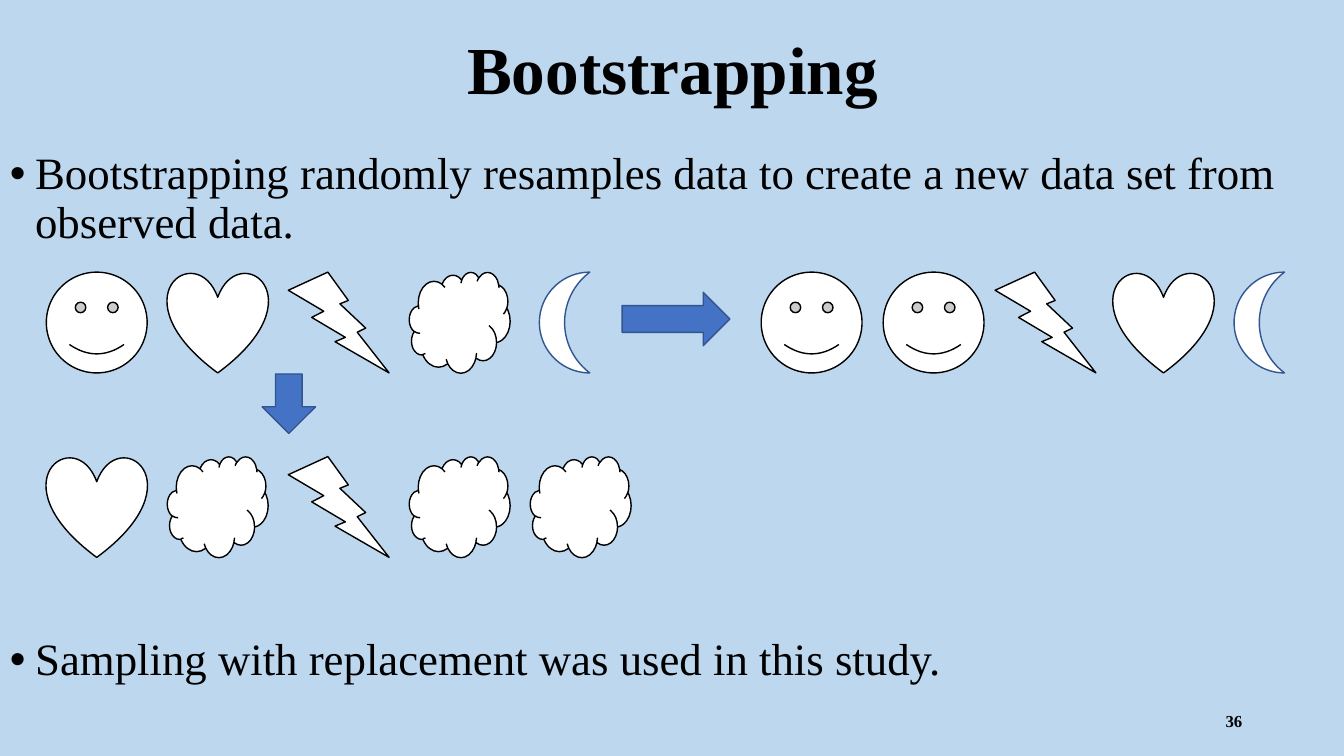
from lxml import etree
from pptx import Presentation
from pptx.dml.color import RGBColor
from pptx.enum.shapes import MSO_SHAPE
from pptx.enum.text import MSO_ANCHOR, PP_ALIGN
from pptx.oxml.ns import qn
from pptx.util import Inches, Pt

SKY = RGBColor(0xBD, 0xD7, 0xEE)
WHITE = RGBColor(0xFF, 0xFF, 0xFF)
BLACK = RGBColor(0, 0, 0)
BLUE = RGBColor(0x44, 0x72, 0xC4)
DARK_BLUE = RGBColor(0x32, 0x54, 0x91)
FONT = "Times New Roman"

SMILEY = MSO_SHAPE.SMILEY_FACE
HEART = MSO_SHAPE.HEART
BOLT = MSO_SHAPE.LIGHTNING_BOLT
CLOUD = MSO_SHAPE.CLOUD
MOON = MSO_SHAPE.MOON
RIGHT_ARROW = MSO_SHAPE.RIGHT_ARROW
DOWN_ARROW = MSO_SHAPE.DOWN_ARROW
TOP, MIDDLE = MSO_ANCHOR.TOP, MSO_ANCHOR.MIDDLE
LEFT, CENTER, RIGHT = PP_ALIGN.LEFT, PP_ALIGN.CENTER, PP_ALIGN.RIGHT

SIZE = 1
FIRST_LEFT, PITCH = 0.46, 1.2
OBSERVED_TOP, RESAMPLE_TOP = 2.7, 4.53
BULLET_GAP = Pt(278)


def add_text(s, box, lines, size, bold=False, align=LEFT, anchor=TOP, spacing=0.9):
    tb = s.shapes.add_textbox(*map(Inches, box))
    tf = tb.text_frame
    tf.word_wrap = True
    tf.vertical_anchor = anchor
    tf.text = "\n".join(lines)
    for p in tf.paragraphs:
        p.alignment = align
        p.line_spacing = spacing
        font = p.runs[0].font
        font.name, font.size, font.bold = FONT, Pt(size), bold
        font.color.rgb = BLACK
    return tf


def add_bullet(p):
    pPr = p._p.get_or_add_pPr()
    pPr.set("marL", str(Inches(0.25)))
    pPr.set("indent", str(-Inches(0.25)))
    etree.SubElement(pPr, qn("a:buFont"), typeface="Arial")
    etree.SubElement(pPr, qn("a:buChar"), char="•")


def add_figure(s, kind, box, fill=WHITE, line=BLACK):
    sp = s.shapes.add_shape(kind, *map(Inches, box))
    sp.shadow.inherit = False
    sp.fill.solid()
    sp.fill.fore_color.rgb = fill
    sp.line.color.rgb = line
    sp.line.width = Pt(1)


def add_sample(s, kinds, lefts, top):
    """Draw one data set as a row of figures; a moon is half as wide."""
    for kind, left in zip(kinds, lefts):
        if kind == MOON:
            add_figure(s, kind, (left, top, SIZE / 2, SIZE), line=DARK_BLUE)
        else:
            add_figure(s, kind, (left, top, SIZE, SIZE))


def main():
    prs = Presentation()
    prs.slide_width, prs.slide_height = Inches(13.33), Inches(7.5)
    s = prs.slides.add_slide(prs.slide_layouts[6])
    s.background.fill.solid()
    s.background.fill.fore_color.rgb = SKY

    add_text(s, (0.92, 0, 11.5, 1.45), ["Bootstrapping"], 48, True, CENTER, MIDDLE)
    body = add_text(s, (0, 1.45, 13.33, 5.9), [
        "Bootstrapping randomly resamples data to create a new data set from observed data.",
        "Sampling with replacement was used in this study.",
    ], 32)
    for p in body.paragraphs:
        add_bullet(p)
    body.paragraphs[1].space_before = BULLET_GAP
    add_text(s, (9.42, 6.95, 3, 0.4), ["36"], 12, True, RIGHT, MIDDLE, 1.0)

    columns = [FIRST_LEFT + i * PITCH for i in range(5)]
    add_sample(s, [SMILEY, HEART, BOLT, CLOUD, MOON],
               columns[:4] + [5.35], OBSERVED_TOP)
    add_sample(s, [SMILEY, SMILEY, BOLT, HEART, MOON],
               [7.55, 8.76, 9.87, 11.04, 12.24], OBSERVED_TOP)
    add_sample(s, [HEART, CLOUD, BOLT, CLOUD, CLOUD], columns, RESAMPLE_TOP)

    add_figure(s, RIGHT_ARROW, (6.17, 2.9, 1.07, 0.53), BLUE, DARK_BLUE)
    add_figure(s, DOWN_ARROW, (2.6, 3.71, 0.53, 0.59), BLUE, DARK_BLUE)
    prs.save("out.pptx")


if __name__ == "__main__":
    main()
